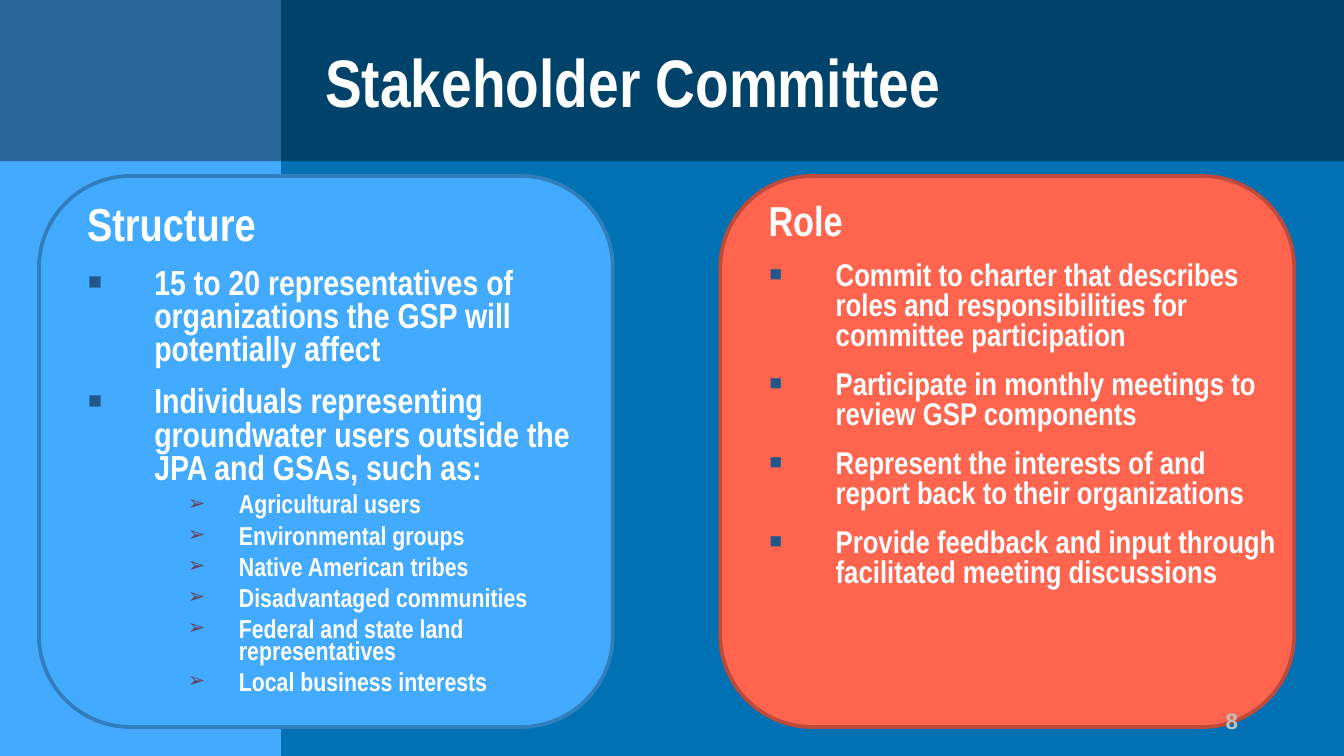
from dataclasses import dataclass

from lxml import etree
from pptx import Presentation
from pptx.dml.color import RGBColor
from pptx.enum.shapes import MSO_SHAPE
from pptx.enum.text import MSO_ANCHOR, PP_ALIGN
from pptx.oxml.ns import qn
from pptx.util import Inches, Pt

RECT, ROUND = MSO_SHAPE.RECTANGLE, MSO_SHAPE.ROUNDED_RECTANGLE
TOP, MID = MSO_ANCHOR.TOP, MSO_ANCHOR.MIDDLE
LEFT, RIGHT = PP_ALIGN.LEFT, PP_ALIGN.RIGHT
WHITE = "FFFFFF"
WIDE = 10
HIGH = WIDE * 9 / 16


@dataclass(frozen=True)
class Mark:
    char: str
    color: str
    scale: int
    left: float
    hang: float
    level: int


@dataclass(frozen=True)
class Line:
    text: str
    size: float
    mark: Mark | None = None
    space: float = 0.8
    before: float = 0


@dataclass(frozen=True)
class Card:
    left: float
    fill: str
    edge: str
    box: tuple[float, float, float, float]
    lines: list[Line]


SQUARE = Mark("▪", "21578A", 130, 0.5, 0.5, 0)
ARROW = Mark("➢", "644459", 80, 1.13, 0.38, 1)


def points(size: float, *texts: str) -> list[Line]:
    return [Line(t, size, SQUARE, 0.8, 10) for t in texts]


def details(size: float, *texts: str) -> list[Line]:
    return [Line(t, size, ARROW, 0.7, 5) for t in texts]


CARDS = [
    Card(0.29, "42AAFF", "317EBD", (0.55, 1.48, 3.87, 3.84), [
        Line("Structure", 24.8),
        *points(
            18.6,
            "15 to 20 representatives of organizations the GSP will potentially affect",
            "Individuals representing groundwater users outside the JPA and GSAs, such as:",
        ),
        *details(
            13.9,
            "Agricultural users",
            "Environmental groups",
            "Native American tribes",
            "Disadvantaged communities",
            "Federal and state land representatives",
            "Local business interests",
        ),
    ]),
    Card(5.36, "FF644E", "BD4A3A", (5.62, 1.5, 4, 3.92), [
        Line("Role", 22.4, space=0.7),
        *points(
            16.8,
            "Commit to charter that describes roles and responsibilities for committee participation",
            "Participate in monthly meetings to review GSP components",
            "Represent the interests of and report back to their organizations",
            "Provide feedback and input through facilitated meeting discussions",
        ),
    ]),
]


def paint(target, color: str) -> None:
    """Give a fill, or the fill of a line, one solid colour."""
    target.solid()
    target.fore_color.rgb = RGBColor.from_string(color)


def add_block(slide, kind, box, fill: str, edge: str = "", alpha: int = 100) -> None:
    shape = slide.shapes.add_shape(kind, *map(Inches, box))
    shape.shadow.inherit = False
    paint(shape.fill, fill)
    if alpha < 100:
        tint = shape.fill._xPr.find(".//" + qn("a:srgbClr"))
        etree.SubElement(tint, qn("a:alpha"), val=str(alpha * 1000))
    if edge:
        paint(shape.line.fill, edge)
        shape.line.width = Pt(2)
    else:
        shape.line.fill.background()


def add_mark(para, mark: Mark) -> None:
    para.level = mark.level
    props = para._p.get_or_add_pPr()
    props.set("marL", str(Inches(mark.left)))
    props.set("indent", str(-Inches(mark.hang)))
    tint = etree.SubElement(props, qn("a:buClr"))
    etree.SubElement(tint, qn("a:srgbClr"), val=mark.color)
    etree.SubElement(props, qn("a:buSzPct"), val=str(mark.scale * 1000))
    etree.SubElement(props, qn("a:buFont"), typeface="Arial")
    etree.SubElement(props, qn("a:buChar"), char=mark.char)


def add_text(slide, box, lines: list[Line], *, font: str = "Arial Narrow",
             color: str = WHITE, align=LEFT, anchor=TOP,
             inset: tuple[float, float] = (0.1, 0.05)) -> None:
    frame = slide.shapes.add_textbox(*map(Inches, box)).text_frame
    frame.word_wrap = True
    frame.vertical_anchor = anchor
    frame.margin_left = frame.margin_right = Inches(inset[0])
    frame.margin_top = frame.margin_bottom = Inches(inset[1])
    for i, line in enumerate(lines):
        para = frame.add_paragraph() if i else frame.paragraphs[0]
        if line.mark:
            add_mark(para, line.mark)
        para.alignment = align
        para.line_spacing = line.space
        para.space_before = Pt(line.before)
        run = para.add_run()
        run.text = line.text
        run.font.name = font
        run.font.size = Pt(line.size)
        run.font.bold = True
        run.font.color.rgb = RGBColor.from_string(color)


def main() -> None:
    deck = Presentation()
    deck.slide_width, deck.slide_height = Inches(WIDE), Inches(HIGH)
    slide = deck.slides.add_slide(deck.slide_layouts[6])
    paint(slide.background.fill, "0071B2")
    add_block(slide, RECT, (0, 0, 2.09, HIGH), "43AAFF")
    add_block(slide, RECT, (0, 0, WIDE, 1.2), "000000", alpha=40)
    add_text(slide, (2.38, 0.13, 4.73, 0.94),
             [Line("Stakeholder Committee", 36, space=1.0)],
             anchor=MID, inset=(0.04, 0.02))
    for card in CARDS:
        add_block(slide, ROUND, (card.left, 1.31, 4.27, 4.1), card.fill, card.edge)
    for card in CARDS:
        add_text(slide, card.box, card.lines)
    add_text(slide, (7.06, 5.21, 2.25, 0.3), [Line("8", 12, space=1.0)],
             font="Arial", color="C0C0C0", align=RIGHT)
    deck.save("out.pptx")


if __name__ == "__main__":
    main()
